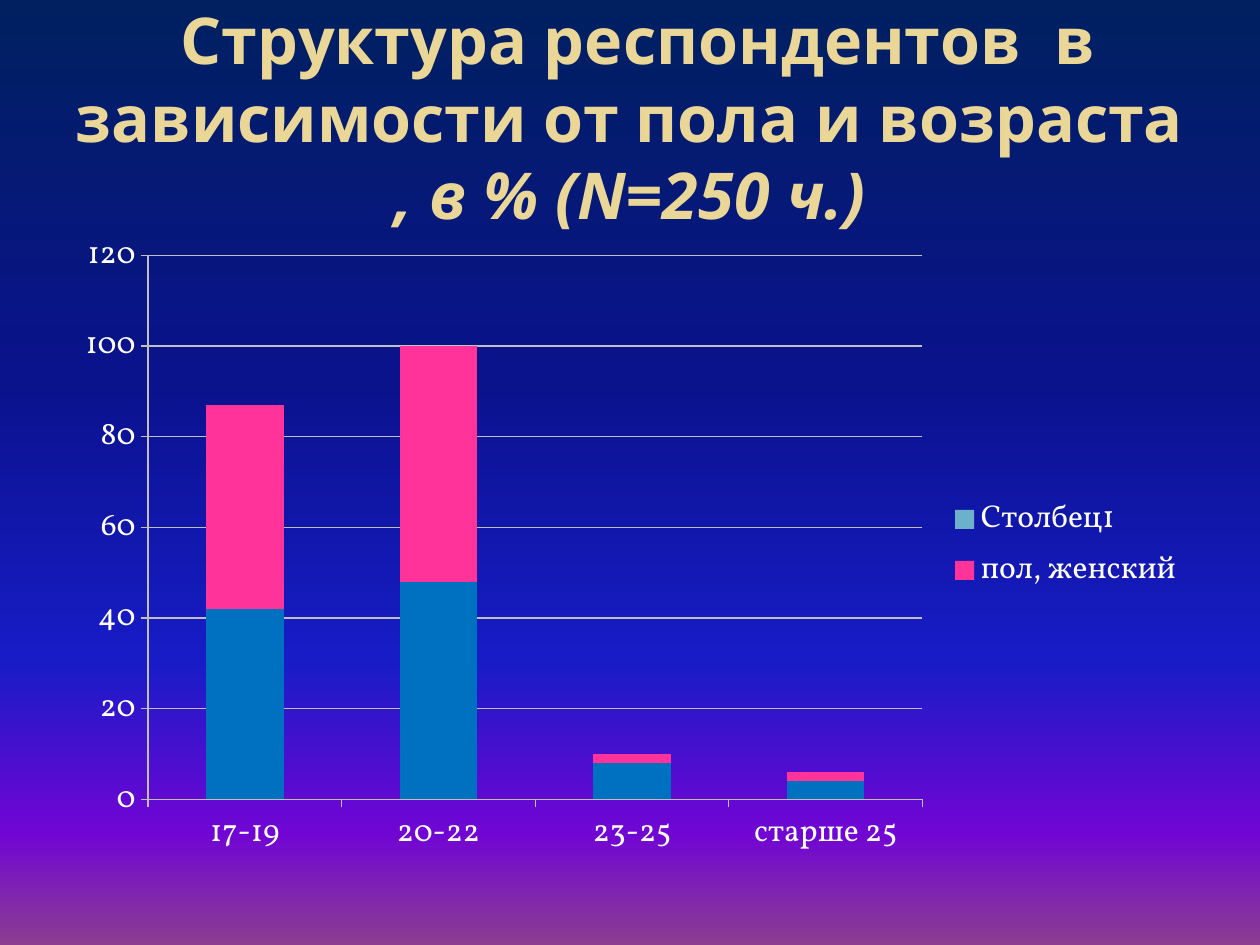
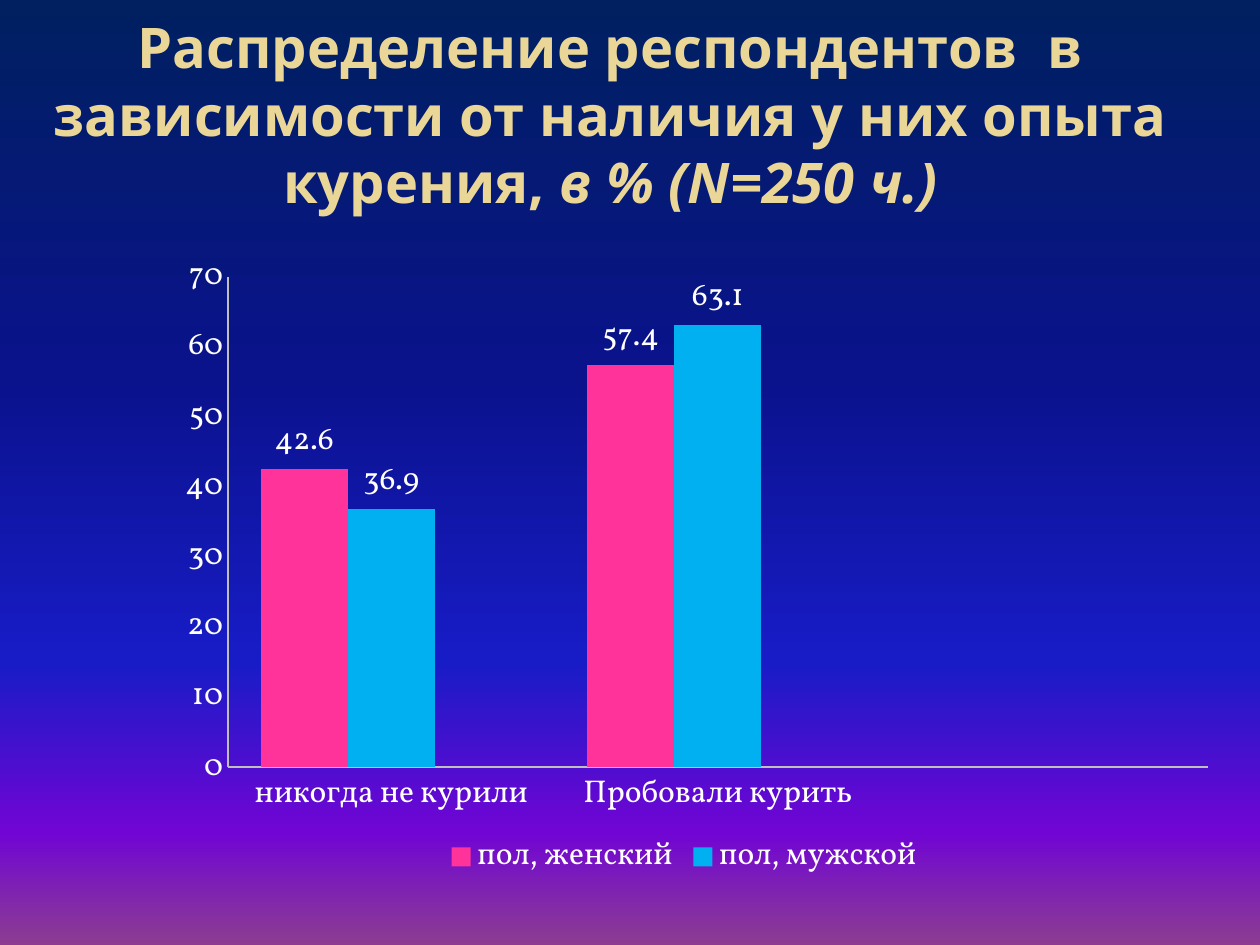
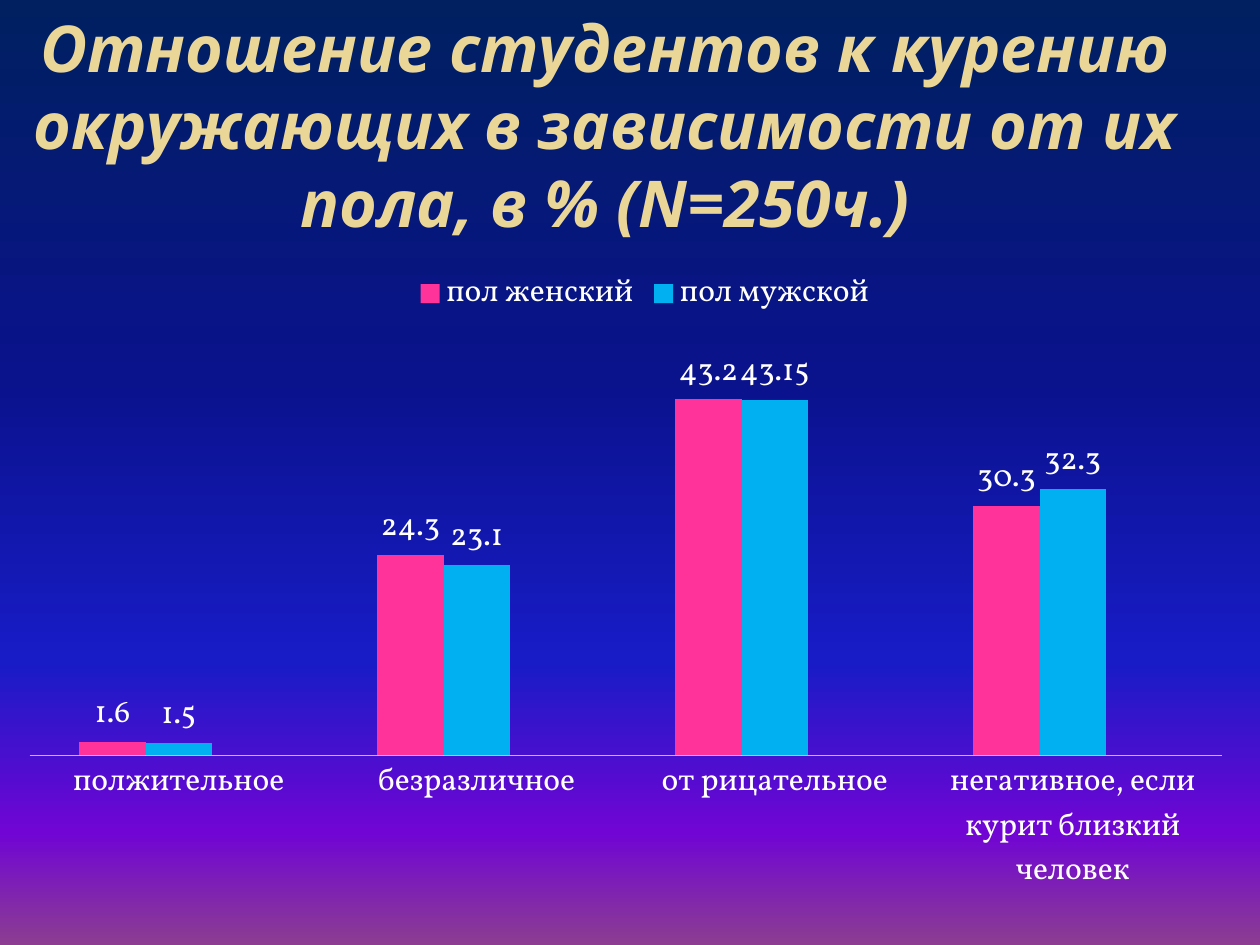
from dataclasses import dataclass

from lxml import etree
from pptx import Presentation
from pptx.chart.data import CategoryChartData
from pptx.dml.color import RGBColor
from pptx.enum import chart as ch
from pptx.enum import text
from pptx.oxml.ns import qn
from pptx.util import Pt

WHITE, GOLD, LINE = "FFFFFF", "EAD696", "BFBFBF"
PINK, BLUE, SKY, TEAL = "FF3399", "0070C0", "00B0F0", "6BB1C9"
TITLE_FONT, CHART_FONT = "Noto Sans", "Vollkorn"
BACKGROUND = [(0, "002060"), (40, "0A128C"), (70, "181CC7"), (88, "7005D4"), (100, "8C3D91")]
STACKED = ch.XL_CHART_TYPE.COLUMN_STACKED
CLUSTERED = ch.XL_CHART_TYPE.COLUMN_CLUSTERED
OUTSIDE, NO_TICK = ch.XL_TICK_MARK.OUTSIDE, ch.XL_TICK_MARK.NONE

Box = tuple[float, float, float, float]


@dataclass
class Title:
    box: Box
    size: float
    plain: str
    italic: str
    bottom: float = 3.6


@dataclass
class Series:
    name: str
    values: list[float | None]
    color: str


@dataclass
class Columns:
    box: Box
    plot: Box  # inner plot area, as fractions of the chart
    kind: ch.XL_CHART_TYPE
    categories: list[str]
    series: list[Series]
    legend: ch.XL_LEGEND_POSITION
    hidden_entry: int
    maximum: float
    gap: int = 150
    tick: ch.XL_TICK_MARK = NO_TICK
    value_axis: bool = True
    grid: bool = False
    labels: bool = True


SLIDES = [
    (
        Title((36, 21.6, 648, 90), 36.9,
              " Структура респондентов  в зависимости от пола и возраста ", ", в % (N=250 ч.)"),
        Columns((36, 126, 648, 370.8), (0.075, 0.054, 0.683, 0.838), STACKED,
                ["17-19", "20-22", "23-25", "старше 25"],
                [Series("Series 1", [42, 48, 8, 4], BLUE),
                 Series("пол, женский", [45, 52, 2, 2], PINK),
                 Series("Столбец1", [None] * 4, TEAL)],
                ch.XL_LEGEND_POSITION.RIGHT, 0, 120, tick=OUTSIDE, grid=True, labels=False),
    ),
    (
        Title((0, 22.3, 697.7, 123.8), 32,
              "Распределение респондентов  в зависимости от наличия у них опыта курения, ",
              "в % (N=250 ч.)", bottom=42),
        Columns((90, 123.8, 601.9, 382.3), (0.067, 0.09, 0.93, 0.733), CLUSTERED,
                ["никогда не курили", "Пробовали курить", ""],
                [Series("пол, женский", [42.6, 57.4, None], PINK),
                 Series("пол, мужской", [36.9, 63.1, None], SKY),
                 Series("Series 3", [None] * 3, TEAL)],
                ch.XL_LEGEND_POSITION.BOTTOM, 2, 70, gap=75),
    ),
    (
        Title((0, 0, 691.9, 141.8), 36.9, "",
              "Отношение студентов к курению окружающих в зависимости от их пола, в % (N=250ч.)"),
        Columns((16.6, 146.2, 703.4, 370.8), (0, 0.135, 0.969, 0.635), CLUSTERED,
                ["полжительное", "безразличное", "от рицательное",
                 "негативное, если курит близкий человек"],
                [Series("пол женский", [1.6, 24.3, 43.2, 30.3], PINK),
                 Series("пол мужской", [1.5, 23.1, 43.15, 32.3], SKY),
                 Series("Series 3", [None] * 4, TEAL)],
                ch.XL_LEGEND_POSITION.TOP, 2, 50, value_axis=False),
    ),
]


def rgb(color: str) -> RGBColor:
    return RGBColor.from_string(color)


def paint_background(master) -> None:
    fill = master.background.fill
    fill.gradient()
    fill.gradient_angle = 270
    stops = master.element.find(".//" + qn("a:gsLst"))
    for old in list(stops):
        stops.remove(old)
    for percent, color in BACKGROUND:
        stop = etree.SubElement(stops, qn("a:gs"), pos=str(percent * 1000))
        etree.SubElement(stop, qn("a:srgbClr"), val=color)


def set_title(slide, title: Title) -> None:
    sp = slide.shapes.title
    sp.left, sp.top, sp.width, sp.height = map(Pt, title.box)
    tf = sp.text_frame
    tf.word_wrap = True
    tf.auto_size = text.MSO_AUTO_SIZE.NONE
    tf.vertical_anchor = text.MSO_ANCHOR.MIDDLE
    tf.margin_left = tf.margin_right = tf.margin_top = Pt(3.6)
    tf.margin_bottom = Pt(title.bottom)
    p = tf.paragraphs[0]
    p.alignment = text.PP_ALIGN.CENTER
    p.line_spacing = 1.0
    p.font.name, p.font.size, p.font.bold = TITLE_FONT, Pt(title.size), True
    p.font.color.rgb = rgb(GOLD)
    for words, italic in ((title.plain, False), (title.italic, True)):
        if words:
            r = p.add_run()
            r.text = words
            r.font.italic = italic


def place_plot(chart, plot: Box) -> None:
    area = chart.element.find(".//" + qn("c:plotArea"))
    for old in area.findall(qn("c:layout")):
        area.remove(old)
    layout = etree.Element(qn("c:layout"))
    area.insert(0, layout)
    manual = etree.SubElement(layout, qn("c:manualLayout"))
    settings = [("layoutTarget", "inner"), ("xMode", "edge"), ("yMode", "edge"),
                *zip("xywh", map(str, plot))]
    for tag, value in settings:
        etree.SubElement(manual, qn(f"c:{tag}"), val=value)


def add_legend(chart, columns: Columns) -> None:
    chart.has_legend = True
    chart.legend.position = columns.legend
    chart.legend.include_in_layout = False
    entry = etree.Element(qn("c:legendEntry"))
    etree.SubElement(entry, qn("c:idx"), val=str(columns.hidden_entry))
    etree.SubElement(entry, qn("c:delete"), val="1")
    chart.element.find(".//" + qn("c:legendPos")).addnext(entry)


def format_axes(chart, columns: Columns) -> None:
    for axis in (chart.category_axis, chart.value_axis):
        axis.major_tick_mark, axis.minor_tick_mark = columns.tick, NO_TICK
        axis.format.line.color.rgb = rgb(LINE)
        axis.format.line.width = Pt(0.75)
    axis = chart.value_axis
    axis.minimum_scale, axis.maximum_scale = 0, columns.maximum
    axis.visible = columns.value_axis
    axis.has_major_gridlines = columns.grid
    if columns.grid:
        line = axis.major_gridlines.format.line
        line.color.rgb, line.width = rgb(LINE), Pt(0.75)


def add_columns(slide, columns: Columns) -> None:
    data = CategoryChartData()
    data.categories = columns.categories
    for series in columns.series:
        data.add_series(series.name, series.values)
    chart = slide.shapes.add_chart(columns.kind, *map(Pt, columns.box), data).chart
    chart.has_title = False
    chart.font.name, chart.font.size = CHART_FONT, Pt(18)
    chart.font.color.rgb = rgb(WHITE)
    plot = chart.plots[0]
    plot.vary_by_categories = False
    plot.gap_width = columns.gap
    plot.overlap = 100 if columns.kind == STACKED else 0
    for drawn, series in zip(plot.series, columns.series):
        drawn.format.fill.solid()
        drawn.format.fill.fore_color.rgb = rgb(series.color)
        if columns.labels:
            drawn.data_labels.show_value = True
            drawn.data_labels.position = ch.XL_LABEL_POSITION.OUTSIDE_END
    format_axes(chart, columns)
    add_legend(chart, columns)
    place_plot(chart, columns.plot)


def main() -> None:
    prs = Presentation()
    prs.slide_width, prs.slide_height = Pt(720), Pt(540)
    paint_background(prs.slide_master)
    title_only = prs.slide_layouts[5]
    for title, columns in SLIDES:
        slide = prs.slides.add_slide(title_only)
        set_title(slide, title)
        add_columns(slide, columns)
    prs.save("out.pptx")


if __name__ == "__main__":
    main()
